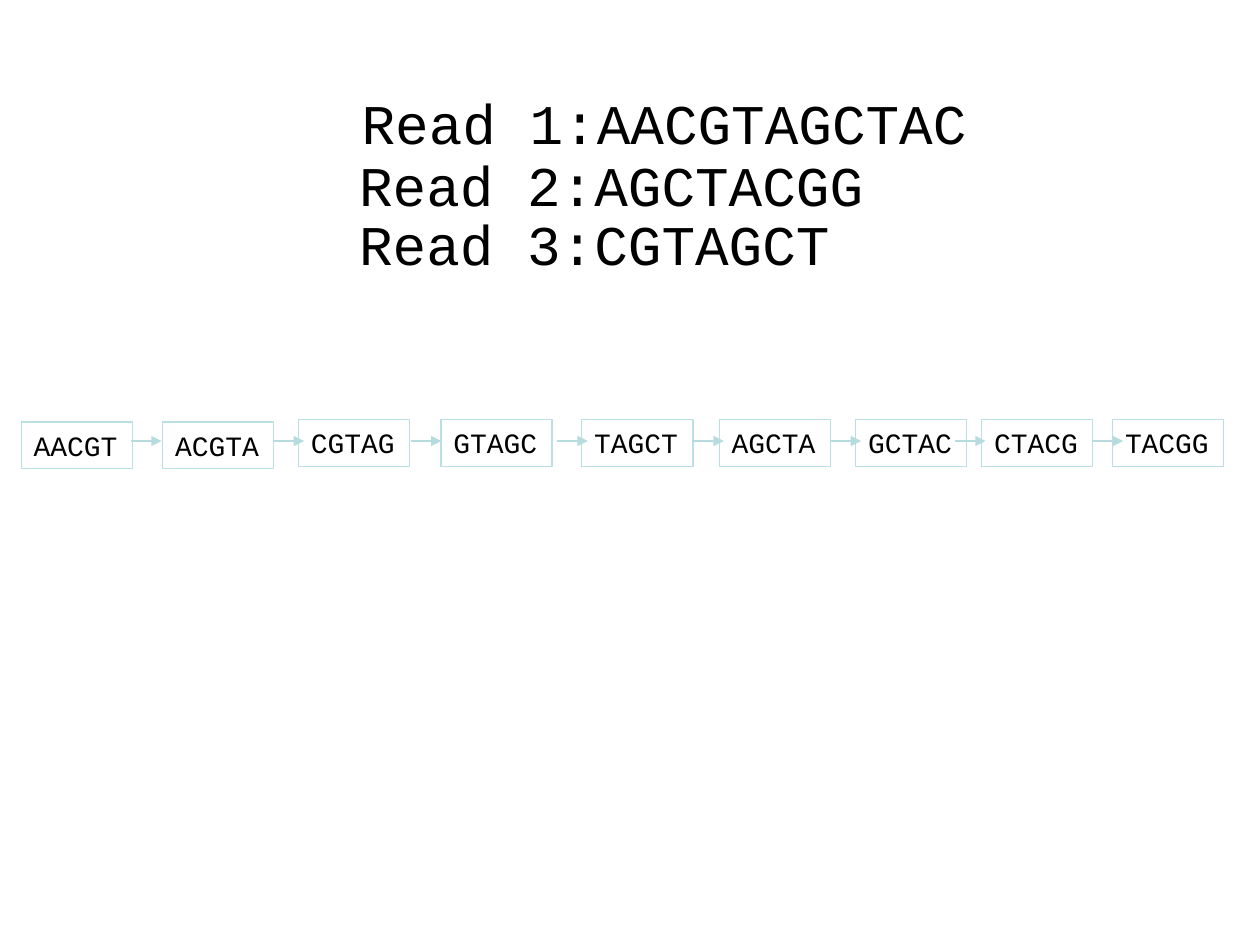
from lxml import etree
from pptx import Presentation
from pptx.dml.color import RGBColor
from pptx.enum.shapes import MSO_CONNECTOR, MSO_SHAPE
from pptx.enum.text import MSO_ANCHOR, MSO_AUTO_SIZE, PP_ALIGN
from pptx.oxml.ns import qn
from pptx.util import Cm, Pt

RECT = MSO_SHAPE.RECTANGLE
STRAIGHT = MSO_CONNECTOR.STRAIGHT
LEFT, TOP = PP_ALIGN.LEFT, MSO_ANCHOR.TOP
FIT = MSO_AUTO_SIZE.SHAPE_TO_FIT_TEXT

THEME = {
    "font": "Courier New",
    "text": RGBColor(0x00, 0x00, 0x00),
    "box": RGBColor(0xBB, 0xE0, 0xE3),
    "arrow": RGBColor(0xB6, 0xDC, 0xDF),
    "read_size": Pt(32),
    "kmer_size": Pt(16),
    "line": Pt(0.75),
}

READS = [
    ("Read 1:AACGTAGCTAC", 7.04, 1.65, 12.85),
    ("Read 2:AGCTACGG", 6.99, 2.9, 10.8),
    ("Read 3:CGTAGCT", 6.99, 4.09, 10.11),
]
READ_H = 1.63

GENOME = "AACGTAGCTACGG"
K = 5
KMERS = [GENOME[i:i + K] for i in range(len(GENOME) - K + 1)]
KMER_LEFTS = [0.43, 3.28, 6.02, 8.89, 11.73, 14.5, 17.25, 19.79, 22.43]
KMER_TOPS = [8.51] * 2 + [8.46] * 7
KMER_W, KMER_H = 2.24, 0.94

ARROW_STARTS = [2.64, 5.51, 8.28, 11.23, 13.97, 16.74, 19.25, 22.02]
ARROW_Y, ARROW_LEN = 8.89, 0.62


def write(sp, text, size):
    tf = sp.text_frame
    tf.text = text
    tf.word_wrap = False
    tf.auto_size = FIT
    tf.vertical_anchor = TOP
    p = tf.paragraphs[0]
    p.alignment = LEFT
    font = p.runs[0].font
    font.name = THEME["font"]
    font.size = size
    font.color.rgb = THEME["text"]


def add_read(slide, text, left, top, width):
    sp = slide.shapes.add_textbox(Cm(left), Cm(top), Cm(width), Cm(READ_H))
    write(sp, text, THEME["read_size"])


def add_kmer(slide, text, left, top):
    sp = slide.shapes.add_shape(RECT, Cm(left), Cm(top), Cm(KMER_W), Cm(KMER_H))
    sp.shadow.inherit = False
    sp.fill.background()
    sp.line.color.rgb = THEME["box"]
    sp.line.width = THEME["line"]
    write(sp, text, THEME["kmer_size"])


def add_arrow(slide, start):
    y = Cm(ARROW_Y)
    cxn = slide.shapes.add_connector(STRAIGHT, Cm(start), y, Cm(start + ARROW_LEN), y)
    cxn.line.color.rgb = THEME["arrow"]
    cxn.line.width = THEME["line"]
    ln = cxn.line._get_or_add_ln()
    etree.SubElement(ln, qn("a:tailEnd"), type="triangle")
    etree.SubElement(cxn._element.spPr, qn("a:effectLst"))


def main():
    prs = Presentation()
    prs.slide_width, prs.slide_height = Cm(25.4), Cm(19.05)
    slide = prs.slides.add_slide(prs.slide_layouts[6])
    for read in READS:
        add_read(slide, *read)
    kmers = list(zip(KMERS, KMER_LEFTS, KMER_TOPS))
    for kmer in kmers:
        add_kmer(slide, *kmer)
    for start in ARROW_STARTS:
        add_arrow(slide, start)
    prs.save("out.pptx")


if __name__ == "__main__":
    main()
